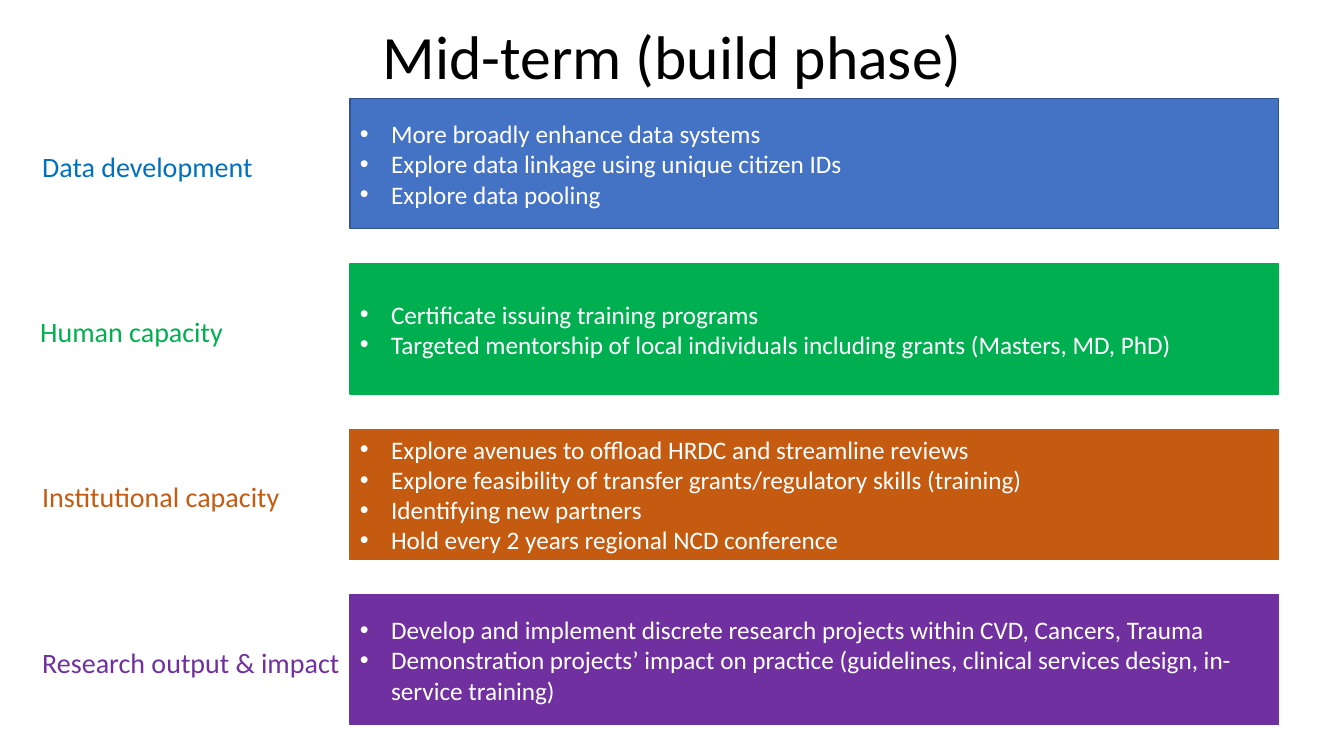
import pptx
import pptx.dml.color
import pptx.enum.shapes
import pptx.enum.text
import pptx.oxml
import pptx.oxml.ns
import pptx.util

PX = 9144  # 100 px to the inch
FONT = "Calibri"
COLORS = {
    "black": "000000",
    "white": "FFFFFF",
    "blue": "4472C4",
    "blue_line": "325491",
    "blue_label": "0070C0",
    "green": "00B050",
    "orange": "C55A11",
    "purple": "7030A0",
}
ROW_TOP, ROW_PITCH, ROW_HEIGHT = 98, 164, 129
PANEL_LEFT, PANEL_WIDTH = 347, 921
LABEL_OFFSET, LABEL_HEIGHT = 45, 44
BULLET_INDENT = 31

# label, label left, label width, label colour, fill, outline, bullet items
ROWS = [
    ("Data development", 32, 237, "blue_label", "blue", "blue_line", [
        "More broadly enhance data systems",
        "Explore data linkage using unique citizen IDs",
        "Explore data pooling",
    ]),
    ("Human capacity", 30, 203, "green", "green", "green", [
        "Certificate issuing training programs",
        "Targeted mentorship of local individuals including grants (Masters, MD, PhD)",
    ]),
    ("Institutional capacity", 32, 258, "orange", "orange", "orange", [
        "Explore avenues to offload HRDC and streamline reviews",
        "Explore feasibility of transfer grants/regulatory skills (training)",
        "Identifying new partners",
        "Hold every 2 years regional NCD conference",
    ]),
    ("Research output & impact", 32, 318, "purple", "purple", "purple", [
        "Develop and implement discrete research projects within CVD, Cancers, Trauma",
        "Demonstration projects’ impact on practice (guidelines, clinical services design, in-service training)",
    ]),
]


def px(length):
    return pptx.util.Emu(length * PX)


def rgb(name):
    return pptx.dml.color.RGBColor.from_string(COLORS[name])


def write_text(paragraph, text, size, color, align="LEFT", spacing=None, bullet=False):
    run = paragraph.add_run()
    run.text = text
    run.font.name = FONT
    run.font.size = pptx.util.Pt(size)
    run.font.color.rgb = rgb(color)
    paragraph.alignment = getattr(pptx.enum.text.PP_ALIGN, align)
    if spacing:
        paragraph.line_spacing = spacing
    if bullet:
        properties = paragraph._p.get_or_add_pPr()
        properties.set("marL", str(px(BULLET_INDENT)))
        properties.set("indent", str(-px(BULLET_INDENT)))
        font = pptx.oxml.xmlchemy.OxmlElement("a:buFont")
        font.set("typeface", "Arial")
        character = pptx.oxml.xmlchemy.OxmlElement("a:buChar")
        character.set("char", "•")
        properties.extend([font, character])


def add_title(slide, left, top, width, height):
    title = slide.shapes.title
    title.left, title.top, title.width, title.height = map(px, (left, top, width, height))
    title.text_frame.vertical_anchor = pptx.enum.text.MSO_ANCHOR.MIDDLE
    write_text(title.text_frame.paragraphs[0], "Mid-term (build phase)", 44, "black",
               align="CENTER", spacing=0.9)


def add_label(slide, left, top, width, height, text, color):
    label = slide.shapes.add_textbox(*map(px, (left, top, width, height)))
    label.text_frame.word_wrap = False
    label.text_frame.auto_size = pptx.enum.text.MSO_AUTO_SIZE.SHAPE_TO_FIT_TEXT
    write_text(label.text_frame.paragraphs[0], text, 20, color)


def add_panel(slide, left, top, width, height, items, fill, outline):
    panel = slide.shapes.add_shape(pptx.enum.shapes.MSO_SHAPE.RECTANGLE,
                                   *map(px, (left, top, width, height)))
    panel.shadow.inherit = False
    panel.fill.solid()
    panel.fill.fore_color.rgb = rgb(fill)
    panel.line.color.rgb = rgb(outline)
    panel.line.width = pptx.util.Pt(1)
    frame = panel.text_frame
    frame.word_wrap = True
    frame.vertical_anchor = pptx.enum.text.MSO_ANCHOR.MIDDLE
    for index, item in enumerate(items):
        paragraph = frame.add_paragraph() if index else frame.paragraphs[0]
        write_text(paragraph, item, 18, "white", bullet=True)


def add_row(slide, top, row):
    label, label_left, label_width, label_color, fill, outline, items = row
    add_panel(slide, PANEL_LEFT, top, PANEL_WIDTH, ROW_HEIGHT, items, fill, outline)
    add_label(slide, label_left, top + LABEL_OFFSET, label_width, LABEL_HEIGHT,
              label, label_color)


def main():
    presentation = pptx.Presentation()
    presentation.slide_width, presentation.slide_height = px(1333), px(750)
    title_only = presentation.slide_layouts[5]
    slide = presentation.slides.add_slide(title_only)

    # Heading
    add_title(slide, 92, 19, 1150, 80)

    # One labelled panel per theme
    for index, row in enumerate(ROWS):
        add_row(slide, ROW_TOP + index * ROW_PITCH, row)

    presentation.save("out.pptx")


if __name__ == "__main__":
    main()
